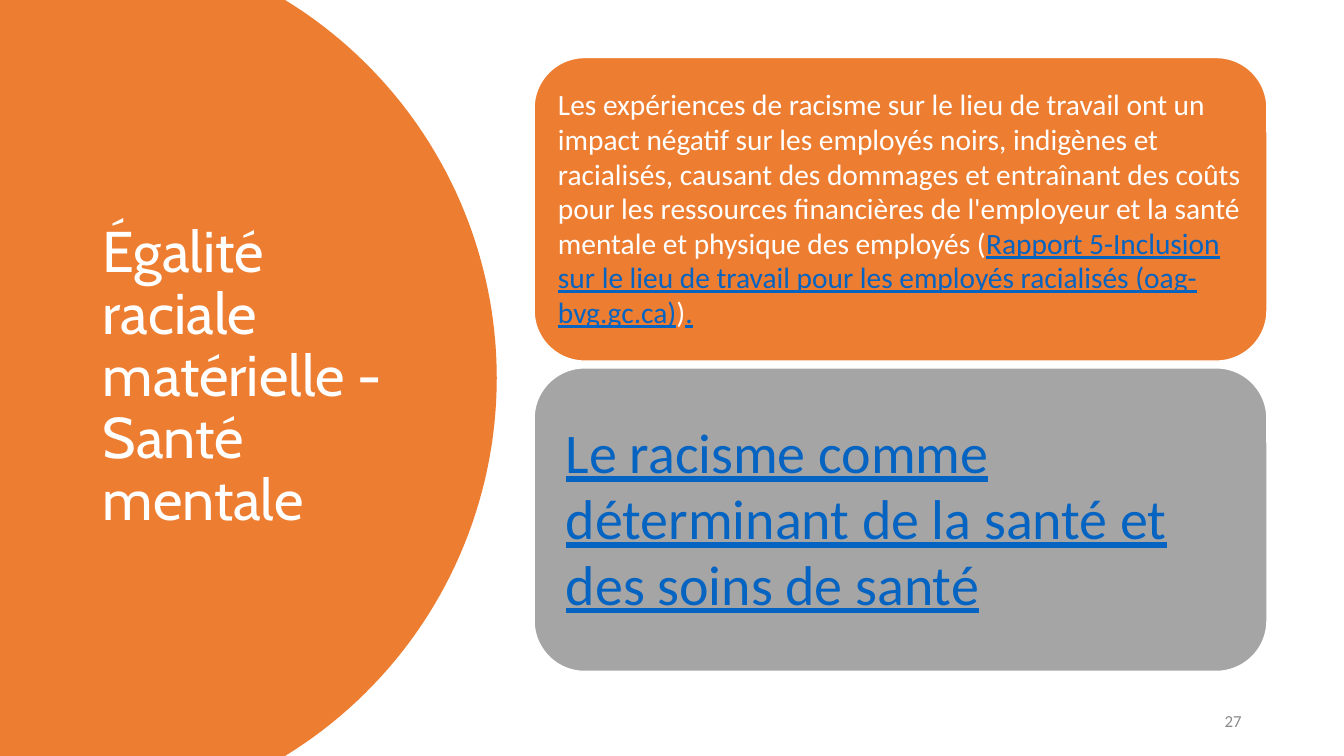
from math import asin, cos, sin

from pptx import Presentation
from pptx.dml.color import RGBColor
from pptx.enum.shapes import MSO_SHAPE
from pptx.enum.text import MSO_ANCHOR, PP_ALIGN
from pptx.util import Cm, Pt

# Content
ORANGE, GREY, WHITE, LINK = "ED7D31", "A5A5A5", "FFFFFF", "0563C1"
TITLE = "Égalité raciale matérielle - Santé mentale"
PAGE = "27"
CARDS = [  # fill, text size, inset in cm, (text, is link) runs
    (ORANGE, 21, 0.23, [
        ("Les expériences de racisme sur le lieu de travail ont un impact négatif "
         "sur les employés noirs, indigènes et racialisés, causant des dommages et "
         "entraînant des coûts pour les ressources financières de l'employeur et la "
         "santé mentale et physique des employés (", False),
        ("Rapport 5-Inclusion sur le lieu de travail pour les employés racialisés "
         "(oag-bvg.gc.ca)", True),
        (")", False),
        (".", True)]),
    (GREY, 40, 0.43, [
        ("Le racisme comme déterminant de la santé et des soins de santé", True)]),
]

# Layout in cm
WIDTH, HEIGHT = 33.87, 19.05
RADIUS, EDGE = 11.17, 12.52
CARD_LEFT, CARD_TOP, CARD_W, CARD_H, CARD_GAP = 13.46, 1.45, 18.47, 7.65, 0.17
ARC_STEPS = 80


def color(hex_code):
    return RGBColor.from_string(hex_code)


def add_run(p, text, size, font="Calibri", fill=WHITE, underline=False):
    r = p.add_run()
    r.text = text
    r.font.name, r.font.size = font, Pt(size)
    r.font.color.rgb = color(fill)
    r.font.underline = underline


def frame(sp, align=PP_ALIGN.LEFT, spacing=None, inset=None):
    tf = sp.text_frame
    tf.word_wrap = True
    tf.vertical_anchor = MSO_ANCHOR.MIDDLE
    if inset is not None:
        tf.margin_left = tf.margin_right = Cm(inset)
        tf.margin_top = tf.margin_bottom = Cm(inset)
    p = tf.paragraphs[0]
    p.alignment, p.line_spacing = align, spacing
    return p


prs = Presentation()
prs.slide_width, prs.slide_height = Cm(WIDTH), Cm(HEIGHT)
s = prs.slides.add_slide(prs.slide_layouts[6])

# Orange panel bounded by a circular arc
half = asin(HEIGHT / 2 / RADIUS)
angles = [half * (2 * i / ARC_STEPS - 1) for i in range(ARC_STEPS + 1)]
arc = [(Cm(EDGE - RADIUS + RADIUS * cos(a)), Cm(HEIGHT / 2 + RADIUS * sin(a)))
       for a in angles]
builder = s.shapes.build_freeform(0, 0)
builder.add_line_segments(arc + [(0, Cm(HEIGHT))], close=True)
panel = builder.convert_to_shape()
panel.shadow.inherit = False
panel.fill.solid()
panel.fill.fore_color.rgb = color(ORANGE)
panel.line.fill.background()

# Title and page number
title = s.shapes.add_textbox(Cm(2.34), Cm(1.78), Cm(8.2), Cm(15.47))
add_run(frame(title, spacing=0.9), TITLE, 41, font="Cabin")
number = s.shapes.add_textbox(Cm(23.92), Cm(17.65), Cm(7.62), Cm(1.01))
add_run(frame(number, align=PP_ALIGN.RIGHT), PAGE, 12, fill="898989")

# Rounded cards
for i, (fill, size, inset, runs) in enumerate(CARDS):
    top = CARD_TOP + i * (CARD_H + CARD_GAP)
    card = s.shapes.add_shape(MSO_SHAPE.ROUNDED_RECTANGLE, Cm(CARD_LEFT), Cm(top),
                              Cm(CARD_W), Cm(CARD_H))
    card.shadow.inherit = False
    card.fill.solid()
    card.fill.fore_color.rgb = color(fill)
    card.line.color.rgb = color(WHITE)
    card.line.width = Pt(1)
    p = frame(card, spacing=0.98, inset=inset)
    for text, is_link in runs:
        add_run(p, text, size, fill=LINK if is_link else WHITE, underline=is_link)

prs.save("out.pptx")
